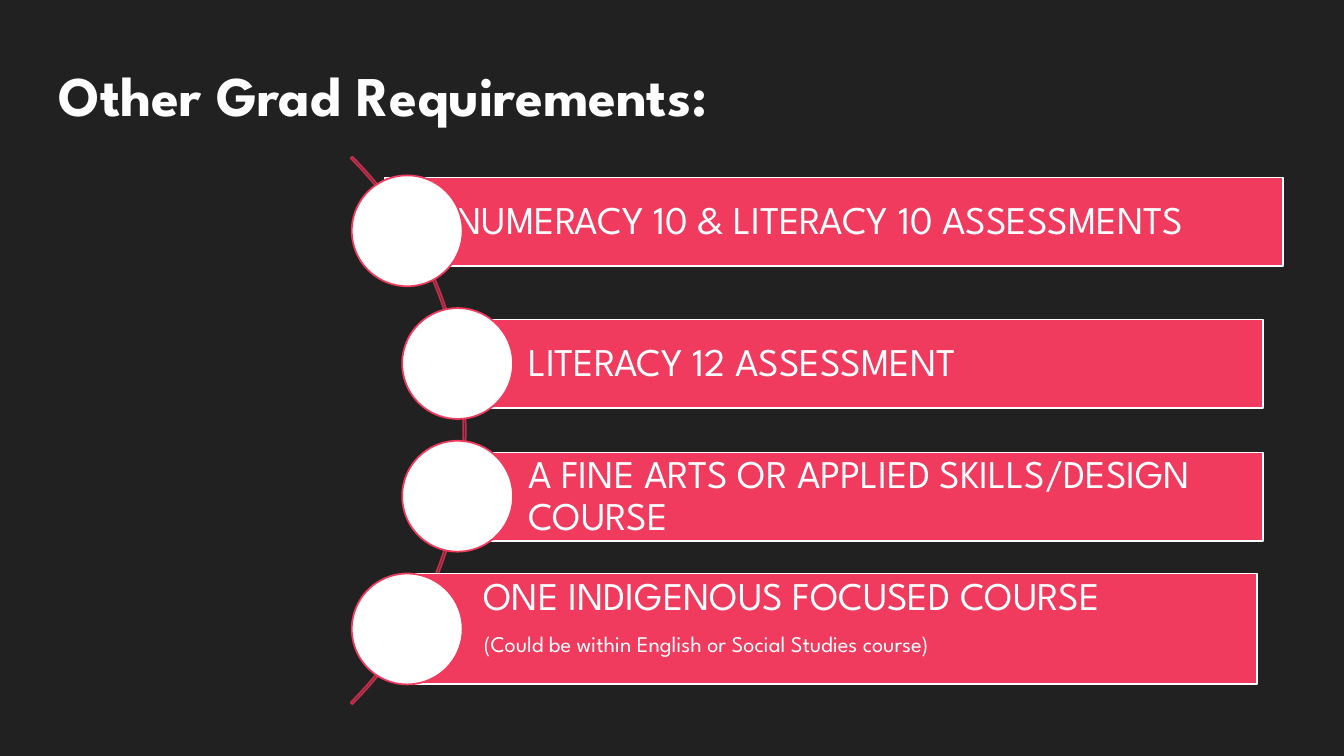
from lxml.etree import SubElement
from pptx import Presentation
from pptx.dml.color import RGBColor
from pptx.enum.shapes import MSO_SHAPE
from pptx.enum.text import MSO_ANCHOR, PP_ALIGN
from pptx.oxml.ns import qn
from pptx.util import Inches, Pt

COLS, ROWS = 80, 45  # square grid cells, six to the inch


def rgb(value):
    return RGBColor.from_string(value)


def cells(n):
    return Inches(n / 6)


class Deck:
    font = "League Spartan"
    dark, white, pink, rose = "212121", "FFFFFF", "F03B5E", "C02F4B"

    def __init__(self):
        self.prs = Presentation()
        self.prs.slide_width, self.prs.slide_height = cells(COLS), cells(ROWS)

    def add_slide(self):
        self.s = self.prs.slides.add_slide(self.prs.slide_layouts[5])
        fill = self.s.background.fill
        fill.solid()
        fill.fore_color.rgb = rgb(self.dark)

    def style(self, font, size, color, bold=False):
        font.name, font.size, font.bold = self.font, Pt(size), bold
        font.color.rgb = rgb(color)

    def title(self, text, x, y, w, h):
        sp = self.s.shapes.title
        sp.left, sp.top, sp.width, sp.height = map(cells, (x, y, w, h))
        tf = sp.text_frame
        tf.word_wrap, tf.vertical_anchor = True, MSO_ANCHOR.BOTTOM
        p = tf.paragraphs[0]
        p.alignment = PP_ALIGN.CENTER
        r = p.add_run()
        r.text = text
        self.style(r.font, 40, "FEFEFE", True)
        # Soft text shadow, placed straight after the text fill
        rPr = r.font._element
        effects = SubElement(rPr, qn("a:effectLst"))
        shadow = SubElement(effects, qn("a:outerShdw"), blurRad="38100",
                            dist="38100", dir="2700000")
        color = SubElement(shadow, qn("a:srgbClr"), val="000000")
        SubElement(color, qn("a:alpha"), val="60000")
        rPr.find(qn("a:solidFill")).addnext(effects)

    def shape(self, kind, x, y, w, h, line, fill=None):
        sp = self.s.shapes.add_shape(kind, *map(cells, (x, y, w, h)))
        sp.shadow.inherit = False
        if fill:
            sp.fill.solid()
            sp.fill.fore_color.rgb = rgb(fill)
        else:
            sp.fill.background()
        sp.line.color.rgb = rgb(line)
        sp.line.width = Pt(1.25)
        return sp

    def arc(self, x, y, size):
        sp = self.shape(MSO_SHAPE.BLOCK_ARC, x, y, size, size, self.rose)
        for i, value in enumerate((189, 27, 0.003)):
            sp.adjustments[i] = value

    def bar(self, x, y, w, h, lines):
        sp = self.shape(MSO_SHAPE.RECTANGLE, x, y, w, h, self.white, self.pink)
        tf = sp.text_frame
        tf.word_wrap = True
        tf.margin_left = cells(4.2)
        tf.margin_right = tf.margin_top = tf.margin_bottom = cells(0.48)
        tf.vertical_anchor = MSO_ANCHOR.MIDDLE
        if len(lines) > 1:
            tf.vertical_anchor, tf.margin_top = MSO_ANCHOR.TOP, cells(0.18)
        for i, (text, size) in enumerate(lines):
            p = tf.add_paragraph() if i else tf.paragraphs[0]
            p.text = text
            p.alignment = PP_ALIGN.LEFT
            p.line_spacing = 0.9
            p.space_before = Pt(10 if i else 0)
            self.style(p.font, size, self.white)

    def disc(self, x, y, size):
        self.shape(MSO_SHAPE.OVAL, x, y, size, size, self.pink, self.white)


def main():
    deck = Deck()
    deck.add_slide()
    deck.title("Other Grad Requirements:", 1.8, 2.28, 42, 5.64)

    # Curve behind the list
    deck.arc(-18.36, 2.58, 46.08)

    # Requirements: disc column, bar place and size, text lines
    requirements = [
        (20.94, (22.92, 10.56, 53.46, 5.28),
         [("NUMERACY 10 & LITERACY 10 ASSESSMENTS", 28)]),
        (23.94, (27.24, 19.02, 47.94, 5.28),
         [("LITERACY 12 ASSESSMENT", 28)]),
        (23.94, (27.24, 26.94, 47.94, 5.28),
         [("A FINE ARTS OR APPLIED SKILLS/DESIGN COURSE", 28)]),
        (20.94, (24.6, 34.14, 50.22, 6.6),
         [("ONE INDIGENOUS FOCUSED COURSE", 28),
          ("(Could be within English or Social Studies course)", 16)]),
    ]
    for i, (disc_x, box, lines) in enumerate(requirements):
        deck.bar(*box, lines)
        deck.disc(disc_x, 10.44 + 7.9 * i, 6.6)

    deck.prs.save("out.pptx")


if __name__ == "__main__":
    main()
